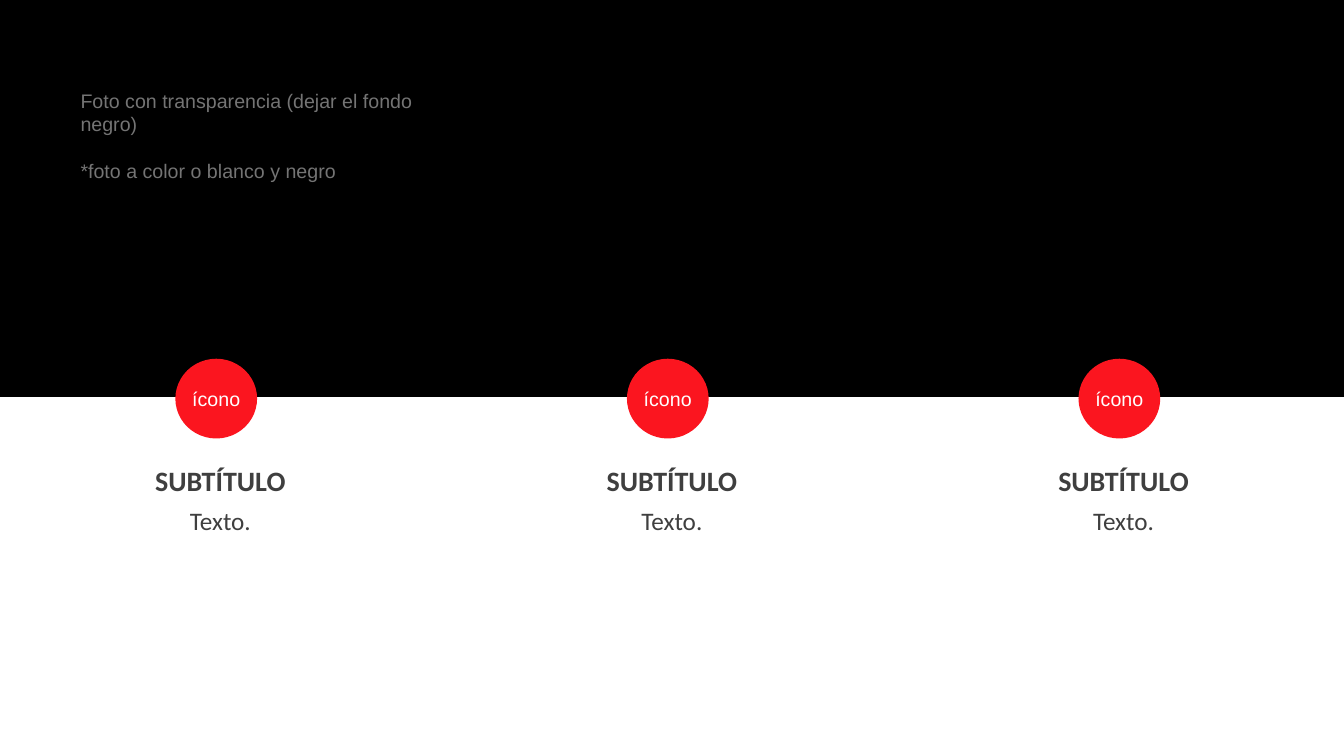
from pptx import Presentation
from pptx.dml.color import RGBColor
from pptx.enum import shapes, text
from pptx.util import Cm, Pt

NOTE = ["Foto con transparencia (dejar el fondo negro)", "*foto a color o blanco y negro"]
COLUMNS = [("ícono", "SUBTÍTULO", "Texto.")] * 3

THEME = {
    "band": "000000",
    "circle": "FB151F",
    "note": {"name": "Arial", "size": Pt(14), "color": "747474"},
    "icon": {"name": "Arial", "size": Pt(14), "color": "FFFFFF"},
    "subtitle": {"name": "Calibri", "size": Pt(20), "color": "3F3F3F", "bold": True},
    "body": {"name": "Calibri", "size": Pt(18), "color": "3F3F3F"},
}

FIRST_LEFT, PITCH, COLUMN_WIDTH = 1.86, 11.38, 7.39
CIRCLE_OFFSET = 2.56


def write(box, lines, style, align, gap=0):
    frame = box.text_frame
    frame.word_wrap = True
    for index, line in enumerate(lines):
        para = frame.paragraphs[0] if index == 0 else frame.add_paragraph()
        para.alignment = align
        if index:
            para.space_before = Pt(gap)
        span = para.add_run()
        span.text = line
        for key, value in THEME[style].items():
            if key == "color":
                span.font.color.rgb = RGBColor.from_string(value)
            else:
                setattr(span.font, key, value)


def add_text(page, place, lines, style, align, gap=0):
    box = page.shapes.add_textbox(*map(Cm, place))
    write(box, lines, style, align, gap)


def add_filled(page, kind, place, color):
    shape = page.shapes.add_shape(kind, *map(Cm, place))
    shape.shadow.inherit = False
    shape.fill.solid()
    shape.fill.fore_color.rgb = RGBColor.from_string(THEME[color])
    shape.line.fill.background()
    return shape


def add_column(page, left, icon, subtitle, body):
    center = text.PP_ALIGN.CENTER
    add_text(page, (left, 12.6, COLUMN_WIDTH, 1.02), [body], "body", center)
    add_text(page, (left, 11.56, COLUMN_WIDTH, 1.12), [subtitle], "subtitle", center)
    circle = add_filled(page, shapes.MSO_SHAPE.OVAL,
                        (left + CIRCLE_OFFSET, 9.04, 2.06, 2.01), "circle")
    frame = circle.text_frame
    frame.vertical_anchor = text.MSO_ANCHOR.MIDDLE
    for side in ("left", "right", "top", "bottom"):
        setattr(frame, f"margin_{side}", 0)
    write(circle, [icon], "icon", center)


def main():
    deck = Presentation()
    deck.slide_width, deck.slide_height = Cm(33.87), Cm(19.05)
    page = deck.slides.add_slide(deck.slide_layouts[6])
    add_filled(page, shapes.MSO_SHAPE.RECTANGLE, (-0.38, 0, 34.62, 10), "band")
    add_text(page, (1.78, 2.11, 10.19, 2.64), NOTE, "note", text.PP_ALIGN.LEFT, gap=16.5)
    for index, column in enumerate(COLUMNS):
        add_column(page, FIRST_LEFT + index * PITCH, *column)
    deck.save("out.pptx")


if __name__ == "__main__":
    main()
